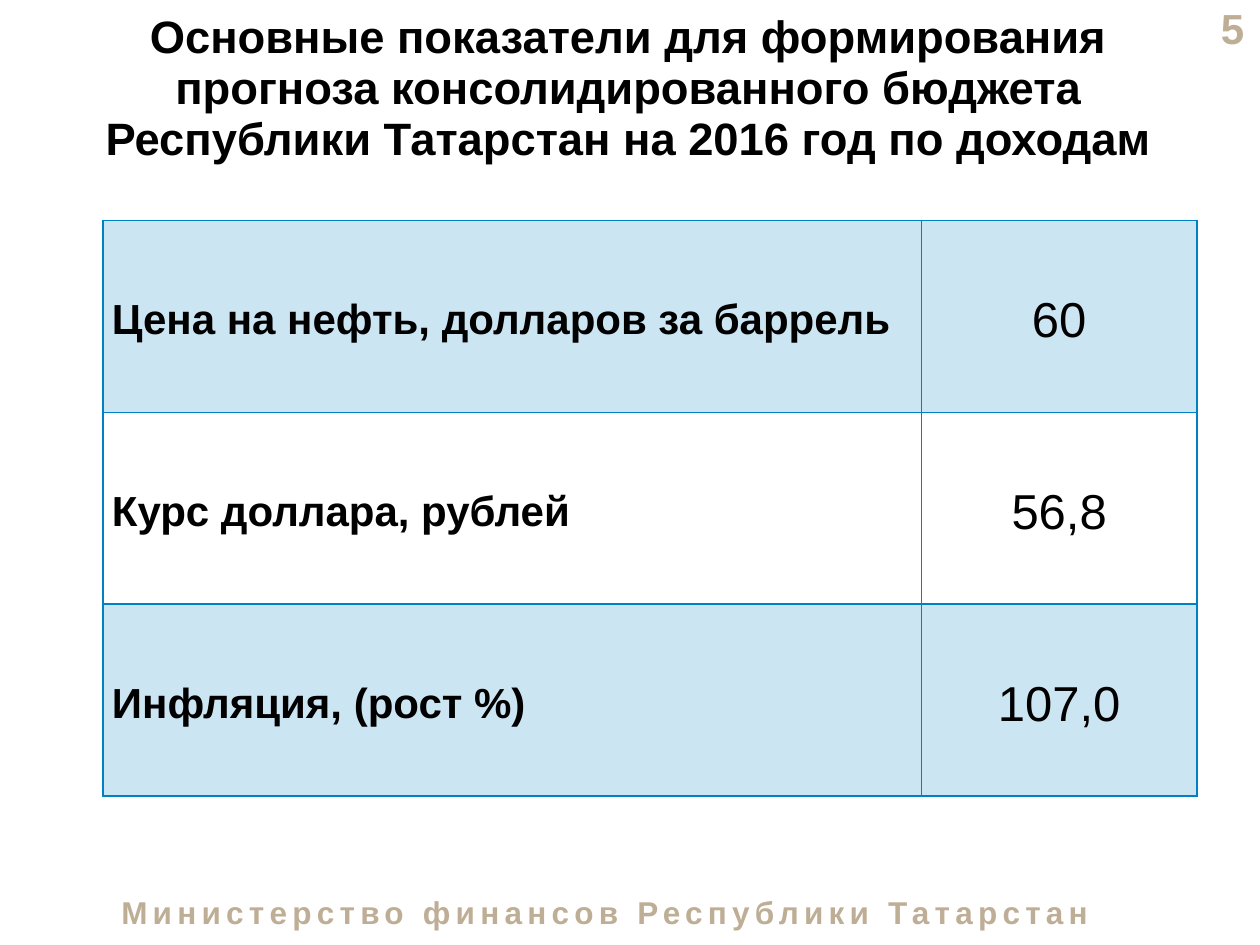
from dataclasses import dataclass

from lxml import etree
from pptx import Presentation
from pptx import util as u
from pptx.dml import color
from pptx.enum import text
from pptx.oxml import ns

Pt = u.Pt


@dataclass(frozen=True)
class Theme:
    font: str = "Arial"
    ink: str = "000000"
    accent: str = "0081C5"
    muted: str = "BFAE96"
    tint: int = 20
    border: float = 1
    title: float = 25.9
    label: float = 24
    value: float = 28
    footer: float = 18


THEME = Theme()
CENTER = text.PP_ALIGN.CENTER
MIDDLE = text.MSO_ANCHOR.MIDDLE
INDICATORS = [
    ("Цена на нефть, долларов за баррель", "60"),
    ("Курс доллара, рублей", "56,8"),
    ("Инфляция, (рост %)", "107,0"),
]


def apply(target, values):
    for name, value in values.items():
        setattr(target, name, value)


def write(frame, words, size, ink=THEME.ink, bold=True, **layout):
    para = frame.paragraphs[0]
    apply(para, layout)
    span = para.add_run()
    span.text = words
    apply(span.font, {"name": THEME.font, "size": Pt(size), "bold": bold})
    span.font.color.rgb = color.RGBColor.from_string(ink)
    return span


def add_text(page, bounds, words, size, anchor=text.MSO_ANCHOR.TOP, **style):
    box = page.shapes.add_textbox(*map(Pt, bounds))
    apply(box.text_frame, {"word_wrap": True, "vertical_anchor": anchor})
    return write(box.text_frame, words, size, **style)


def set_borders(cell):
    properties = cell._tc.get_or_add_tcPr()
    for side in ("lnL", "lnR", "lnT", "lnB"):
        line = etree.SubElement(properties, ns.qn(f"a:{side}"), w=str(Pt(THEME.border)))
        fill = etree.SubElement(line, ns.qn("a:solidFill"))
        etree.SubElement(fill, ns.qn("a:srgbClr"), val=THEME.accent)


def set_fill(cell, tinted):
    if not tinted:
        cell.fill.background()
        return
    cell.fill.solid()
    cell.fill.fore_color.rgb = color.RGBColor.from_string(THEME.accent)
    shade = cell._tc.tcPr.find(".//" + ns.qn("a:srgbClr") + "[last()]")
    shade = cell._tc.tcPr.find(ns.qn("a:solidFill")).find(ns.qn("a:srgbClr"))
    etree.SubElement(shade, ns.qn("a:alpha"), val=str(THEME.tint * 1000))


def add_indicators(page, left, top, widths, row_height):
    size = (sum(widths), row_height * len(INDICATORS))
    table = page.shapes.add_table(
        len(INDICATORS), len(widths), *map(Pt, (left, top, *size))
    ).table
    apply(table, {"first_row": False, "horz_banding": False})
    for column, width in zip(table.columns, widths):
        column.width = Pt(width)
    styles = (
        {"size": THEME.label, "alignment": text.PP_ALIGN.LEFT},
        {"size": THEME.value, "bold": False, "alignment": CENTER},
    )
    margins = {
        "margin_left": Pt(5), "margin_right": Pt(5),
        "margin_top": 0, "margin_bottom": 0, "vertical_anchor": MIDDLE,
    }
    for row, entries in enumerate(INDICATORS):
        table.rows[row].height = Pt(row_height)
        for column, (words, style) in enumerate(zip(entries, styles)):
            cell = table.cell(row, column)
            apply(cell, margins)
            set_borders(cell)
            set_fill(cell, row % 2 == 0)
            write(cell.text_frame, words, line_spacing=1.15, **style)


def main():
    deck = Presentation()
    apply(deck, {"slide_width": Pt(720), "slide_height": Pt(540)})
    page = deck.slides.add_slide(deck.slide_layouts[6])
    add_text(page, (672, 3.5, 46, 24.5), "5", THEME.label, MIDDLE,
             ink=THEME.muted, alignment=text.PP_ALIGN.RIGHT)
    footer = add_text(page, (40.5, 507, 610.5, 29),
                      "Министерство финансов Республики Татарстан",
                      THEME.footer, ink=THEME.muted, alignment=CENTER)
    footer.font._element.set("spc", "300")
    add_text(page, (40.5, 3.5, 637, 96),
             "Основные показатели для формирования прогноза консолидированного "
             "бюджета Республики Татарстан на 2016 год по доходам",
             THEME.title, alignment=CENTER, line_spacing=0.94)
    add_indicators(page, 59, 126, (467.5, 157.5), 109.6)
    deck.save("out.pptx")


if __name__ == "__main__":
    main()
